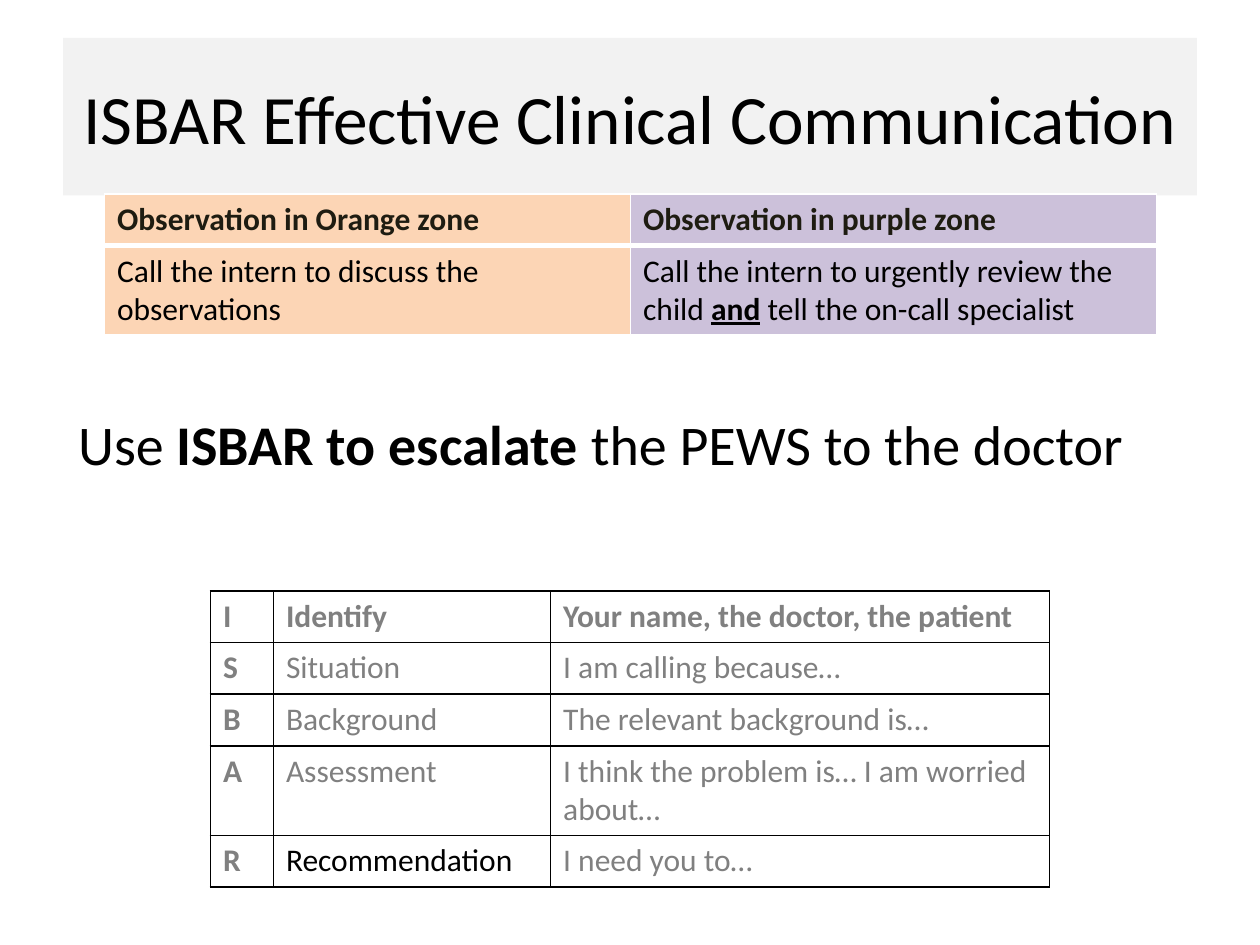
from lxml.etree import SubElement
from pptx import Presentation
from pptx.dml.color import RGBColor
from pptx.enum.text import MSO_ANCHOR, MSO_AUTO_SIZE, PP_ALIGN
from pptx.oxml.ns import qn
from pptx.util import Inches, Pt

BLACK, GREY, WHITE, DARK = "000000", "808080", "FFFFFF", "1E1C11"
ORANGE, PURPLE = "FCD5B5", "CCC1DA"
ZONES = [
    ["Observation in Orange zone", "Observation in purple zone"],
    ["Call the intern to discuss the observations",
     ["Call the intern to urgently review the child ", "and",
      " tell the on-call specialist"]],
]
STEPS = [
    ["I", "Identify", "Your name, the doctor, the patient"],
    ["S", "Situation", "I am calling because…"],
    ["B", "Background", "The relevant background is…"],
    ["A", "Assessment", "I think the problem is… I am worried about…"],
    ["R", "Recommendation", "I need you to…"],
]


def paint(fill, color):
    fill.solid()
    fill.fore_color.rgb = RGBColor.from_string(color)


def style(par, size, color, bold=False):
    font = par.font
    font.name, font.size, font.bold = "Calibri", Pt(size), bold
    font.color.rgb = RGBColor.from_string(color)


def place(shape, box):
    shape.left, shape.top, shape.width, shape.height = map(Inches, box)
    shape.text_frame.auto_size = MSO_AUTO_SIZE.NONE
    shape.text_frame.word_wrap = True


def write(par, text):
    parts = [text] if isinstance(text, str) else text
    for i, part in enumerate(parts):
        run = par.add_run()
        run.text = part
        if i == 1:
            run.font.bold = True
    return par.runs


def edge(cell, color, widths):
    props = cell._tc.get_or_add_tcPr()
    for side, width in zip("LRTB", widths):
        line = SubElement(props, qn(f"a:ln{side}"), w=str(Pt(width)))
        fill = SubElement(line, qn("a:solidFill"))
        SubElement(fill, qn("a:srgbClr"), val=color)


def add_grid(slide, box, rows, cols, heights):
    frame = slide.shapes.add_table(len(rows), len(cols), *map(Inches, box))
    table = frame.table
    table.first_row = table.horz_banding = False
    for col, width in zip(table.columns, cols):
        col.width = Inches(width)
    for row, height, texts in zip(table.rows, heights, rows):
        row.height = Inches(height)
        for cell, text in zip(row.cells, texts):
            write(cell.text_frame.paragraphs[0], text)
    return table


def add_title(slide, box):
    title = slide.shapes.title
    place(title, box)
    paint(title.fill, "F2F2F2")
    title.text_frame.vertical_anchor = MSO_ANCHOR.MIDDLE
    par = title.text_frame.paragraphs[0]
    write(par, "ISBAR Effective Clinical Communication")
    par.alignment = PP_ALIGN.CENTER
    style(par, 39.6, BLACK)


def add_body(slide, box):
    body = slide.placeholders[1]
    place(body, box)
    par = body.text_frame.paragraphs[0]
    write(par, ["Use ", "ISBAR to escalate", " the PEWS to the doctor"])
    style(par, 32, BLACK)
    par.space_before = Pt(6.4)
    props = par._p.get_or_add_pPr()
    props.set("marL", "0")
    props.set("indent", "0")
    bullet = SubElement(props, qn("a:buNone"))
    props.find(qn("a:spcBef")).addnext(bullet)


def add_zones(slide, box):
    half = box[2] / 2
    table = add_grid(slide, box, ZONES, [half, half], [0.41, 0.7])
    for r, row in enumerate(table.rows):
        for cell, color in zip(row.cells, [ORANGE, PURPLE]):
            edge(cell, WHITE, [1, 1, 1, 3] if r == 0 else [1, 1, 3, 1])
            paint(cell.fill, color)
            style(cell.text_frame.paragraphs[0], 18,
                  BLACK if r else DARK, r == 0)
    table.cell(1, 1).text_frame.paragraphs[0].runs[1].font.underline = True


def add_steps(slide, box):
    heights = [0.41, 0.41, 0.41, 0.7, 0.41]
    table = add_grid(slide, box, STEPS, [0.5, 2.2, 3.96], heights)
    for r, row in enumerate(table.rows):
        for c, cell in enumerate(row.cells):
            edge(cell, BLACK, [1] * 4)
            cell.fill.background()
            color = BLACK if (r, c) == (4, 1) else GREY
            style(cell.text_frame.paragraphs[0], 18, color, r == 0 or c == 0)


def main():
    deck = Presentation()
    deck.slide_width, deck.slide_height = Inches(10), Inches(7.5)
    slide = deck.slides.add_slide(deck.slide_layouts[1])
    paint(slide.background.fill, WHITE)
    add_title(slide, (0.5, 0.3, 9, 1.25))
    add_steps(slide, (1.67, 4.69, 6.67, 2.32))
    add_body(slide, (0.52, 3.2, 9, 0.79))
    add_zones(slide, (0.83, 1.54, 8.35, 1.11))
    deck.save("out.pptx")


if __name__ == "__main__":
    main()
